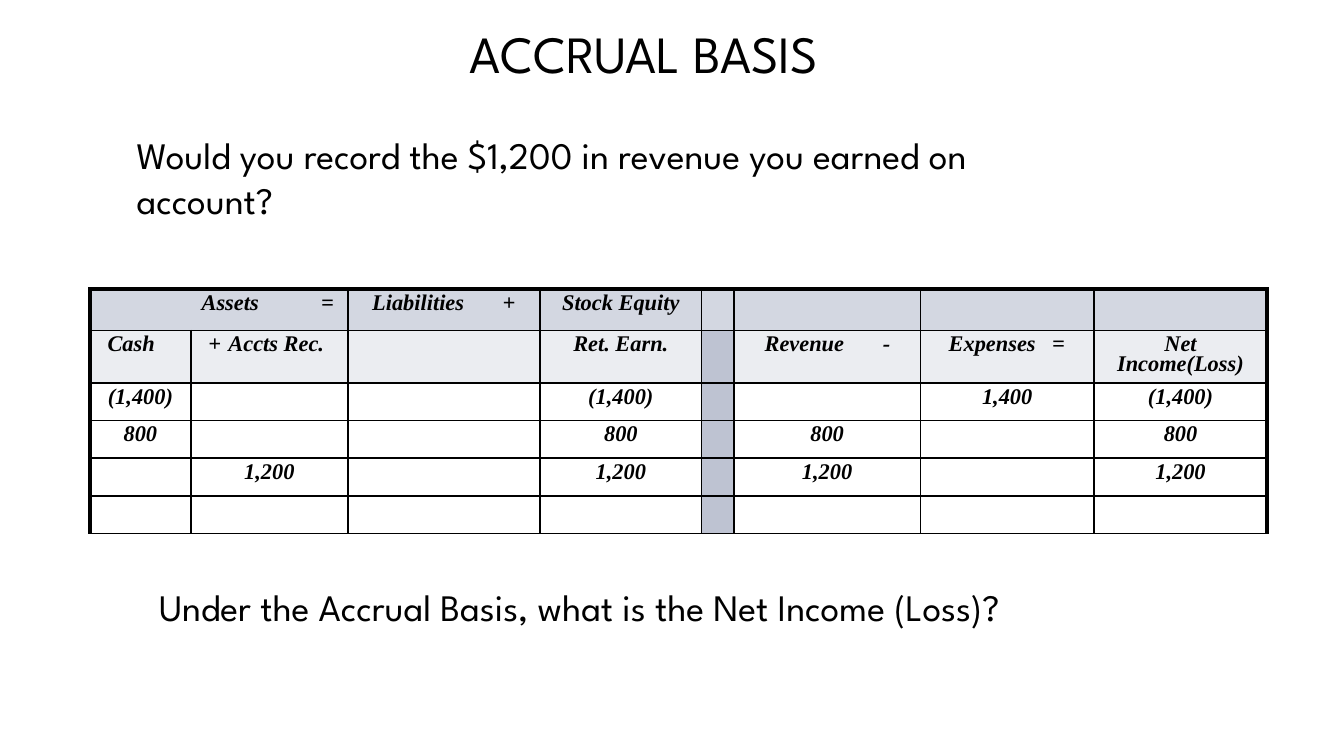
import dataclasses
import typing

import lxml.etree
import pptx
import pptx.dml.color
import pptx.enum.text
import pptx.oxml.ns
import pptx.util

RGB = pptx.dml.color.RGBColor
ALIGN = pptx.enum.text.PP_ALIGN
Inches = pptx.util.Inches
Pt = pptx.util.Pt
qn = pptx.oxml.ns.qn

BLACK = RGB(0x00, 0x00, 0x00)
HEAD = RGB(0xD3, 0xD7, 0xE1)
SUB = RGB(0xEB, 0xED, 0xF1)
GAP = RGB(0xBE, 0xC3, 0xD2)

WIDE = 10
HIGH = WIDE * 9 / 16
UNIT = WIDE / 120  # grid step for the text boxes
THIN, THICK = 1, 2.25
COLS = (0.75, 1.17, 1.43, 1.2, 0.24, 1.39, 1.29, 1.29)
ROWS = (0.31, 0.39) + (0.28,) * 4
GAP_COL = 4


@dataclasses.dataclass
class Prompt:
    """A line of text; its box is given in grid steps."""
    text: str
    left: float
    top: float
    width: float
    height: float
    size: int = 20
    align: typing.Any = ALIGN.LEFT


@dataclasses.dataclass
class Entry:
    """Table text; indent and tab (inches) replace centring when given."""
    text: str
    indent: typing.Optional[float] = None
    tab: typing.Optional[float] = None


PROMPTS = (
    Prompt("ACCRUAL BASIS", 33.5, 1.3, 48, 6.8, 28, ALIGN.CENTER),
    Prompt("Would you record the $1,200 in revenue you earned on account?",
           11, 11.8, 87, 8),
    Prompt("Under the Accrual Basis, what is the Net Income (Loss)?",
           13, 50.2, 92, 8),
)

# Entries by (row, column)
ENTRIES = {
    (0, 0): Entry("Assets\t=", 0.73, 0.89),
    (0, 2): Entry("Liabilities\t+", 0.08, 0.97),
    (0, 3): Entry("Stock Equity"),
    (1, 0): Entry("Cash", 0.03),
    (1, 1): Entry("+\tAccts Rec.", 0.03, 0.15),
    (1, 3): Entry("Ret. Earn."),
    (1, 5): Entry("Revenue\t-", 0.13, 0.88),
    (1, 6): Entry("Expenses\t=", 0.11, 0.77),
    (1, 7): Entry("Net Income(Loss)"),
}
AMOUNTS = {
    2: {0: "(1,400)", 3: "(1,400)", 6: "1,400", 7: "(1,400)"},
    3: {0: "800", 3: "800", 5: "800", 7: "800"},
    4: {1: "1,200", 3: "1,200", 5: "1,200", 7: "1,200"},
}
ENTRIES.update({(row, col): Entry(text)
                for row, line in AMOUNTS.items() for col, text in line.items()})


def fill_holder(shape: typing.Any, prompt: Prompt) -> None:
    shape.left, shape.top, shape.width, shape.height = (
        Inches(UNIT * step)
        for step in (prompt.left, prompt.top, prompt.width, prompt.height))
    frame = shape.text_frame
    frame.text = prompt.text
    frame.word_wrap = True
    frame.auto_size = pptx.enum.text.MSO_AUTO_SIZE.NONE
    frame.vertical_anchor = pptx.enum.text.MSO_ANCHOR.MIDDLE
    para = frame.paragraphs[0]
    para.alignment = prompt.align
    para.space_before = Pt(0)
    props = para._p.get_or_add_pPr()
    props.set("marL", "0")
    props.set("indent", "0")
    lxml.etree.SubElement(props, qn("a:buNone"))
    para.font.size = Pt(prompt.size)
    para.font.name = "League Spartan"
    para.font.color.rgb = BLACK


def add_edges(cell: typing.Any, row: int, col: int) -> None:
    """Rule all four sides, thicker at the table's left, top and right."""
    heavy = {"L": col == 0, "R": col == len(COLS) - 1, "T": row == 0, "B": False}
    props = cell._tc.get_or_add_tcPr()
    for side, bold in heavy.items():
        line = lxml.etree.SubElement(props, qn(f"a:ln{side}"),
                                     w=str(Pt(THICK if bold else THIN)))
        paint = lxml.etree.SubElement(line, qn("a:solidFill"))
        lxml.etree.SubElement(paint, qn("a:srgbClr"), val=str(BLACK))


def paint_cell(cell: typing.Any, row: int, col: int) -> None:
    if row == 0:
        shade = HEAD
    elif col == GAP_COL:
        shade = GAP
    else:
        shade = SUB if row == 1 else None
    if shade is None:
        cell.fill.background()
    else:
        cell.fill.solid()
        cell.fill.fore_color.rgb = shade


def write_cell(cell: typing.Any, entry: Entry) -> None:
    cell.margin_left = Inches(0.1 + (entry.indent or 0))
    cell.margin_right = Inches(0.1 if entry.indent is None else 0)
    cell.margin_top = cell.margin_bottom = Inches(0.04)
    para = cell.text_frame.paragraphs[0]
    para.alignment = ALIGN.CENTER if entry.indent is None else ALIGN.LEFT
    para.line_spacing = 0.8
    if entry.tab is not None:
        tabs = lxml.etree.SubElement(para._p.get_or_add_pPr(), qn("a:tabLst"))
        lxml.etree.SubElement(tabs, qn("a:tab"), pos=str(Inches(entry.tab)), algn="l")
    if entry.text:
        para.text = entry.text
    else:
        lxml.etree.SubElement(para._p, qn("a:endParaRPr"), sz=str(Pt(12).centipoints))
    font = para.font
    font.size, font.name = Pt(12), "Times New Roman"
    font.bold = font.italic = True
    font.color.rgb = BLACK


def add_ledger(slide: typing.Any) -> None:
    table = slide.shapes.add_table(
        len(ROWS), len(COLS), Inches(0.67), Inches(2.15),
        Inches(sum(COLS)), Inches(sum(ROWS))).table
    table.first_row = table.horz_banding = False
    for col, width in enumerate(COLS):
        table.columns[col].width = Inches(width)
    for row, height in enumerate(ROWS):
        table.rows[row].height = Inches(height)
    table.cell(0, 0).merge(table.cell(0, 1))
    for row in range(len(ROWS)):
        for col in range(len(COLS)):
            cell = table.cell(row, col)
            add_edges(cell, row, col)
            paint_cell(cell, row, col)
            write_cell(cell, ENTRIES.get((row, col), Entry("")))


def main() -> None:
    deck = pptx.Presentation()
    deck.slide_width, deck.slide_height = Inches(WIDE), Inches(HIGH)
    slide = deck.slides.add_slide(deck.slide_layouts.get_by_name("Two Content"))
    for shape, prompt in zip(list(slide.placeholders), PROMPTS):
        fill_holder(shape, prompt)
    add_ledger(slide)
    deck.save("out.pptx")


if __name__ == "__main__":
    main()
